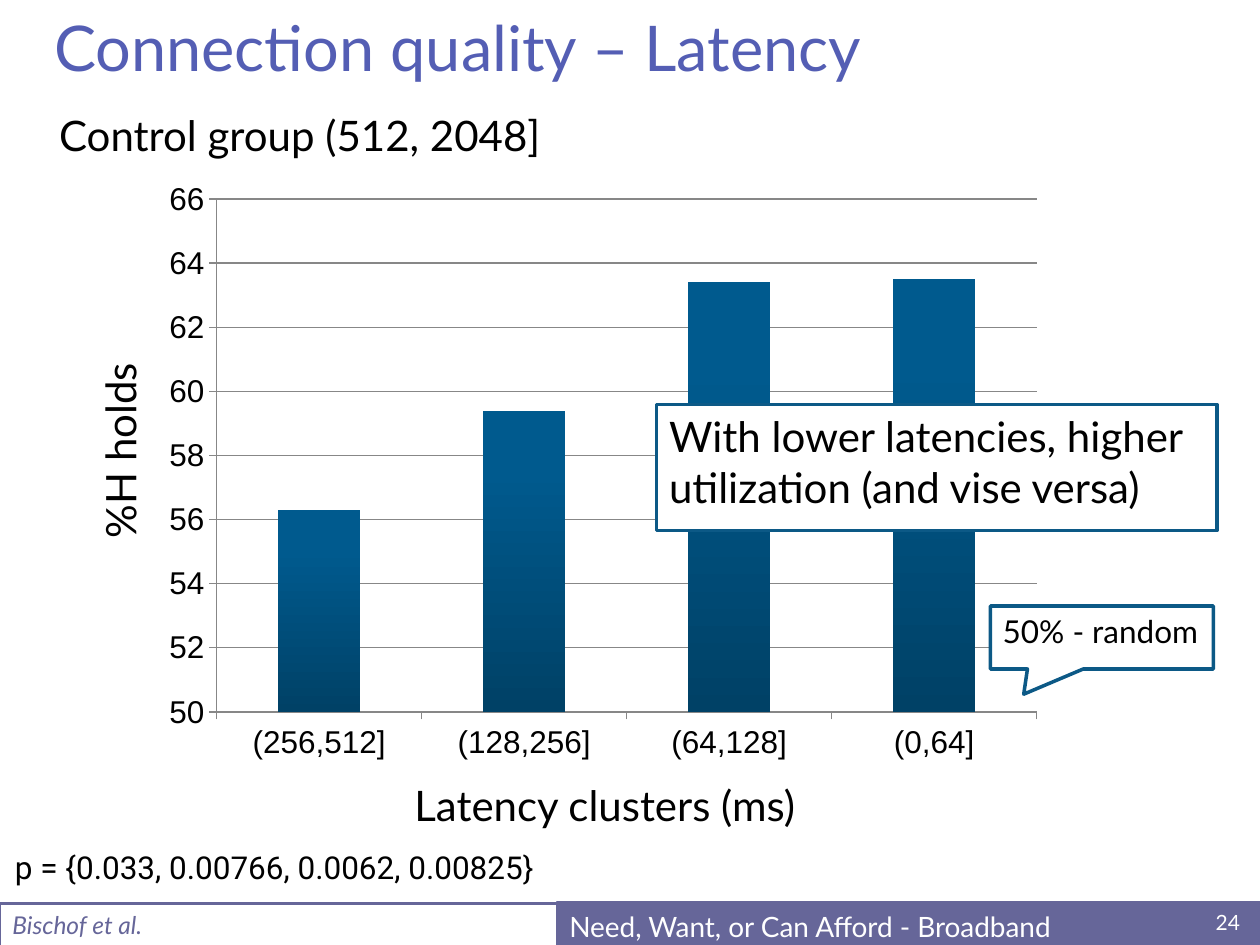
from dataclasses import dataclass

from lxml import etree
from pptx import Presentation
from pptx import util as u
from pptx.chart.data import CategoryChartData
from pptx.dml.color import RGBColor
from pptx.enum import chart as charts, shapes, text
from pptx.oxml import parse_xml
from pptx.oxml.ns import nsdecls, qn

COLS, ROWS = 100, 75
INK = {
    "title": "545EB4", "foot": "666699", "edge": "0C5986", "text": "000000",
    "paper": "FFFFFF", "grid": "878787", "top": "005A8E", "base": "004166",
}


@dataclass
class Box:
    """A place on the grid, in columns and rows."""
    col: float
    row: float
    wide: float
    high: float


@dataclass
class Label:
    words: str
    box: Box
    size: int = 24
    ink: str = "text"
    face: str = "Lato"
    slant: bool = False
    wrap: bool = False
    turn: int = 0


@dataclass
class Bar:
    box: Box
    fill: str | None


deck = Presentation()
deck.slide_width, deck.slide_height = u.Inches(10), u.Inches(7.5)
slide = deck.slides.add_slide(deck.slide_layouts[1])


def hue(name: str) -> RGBColor:
    return RGBColor.from_string(INK[name])


def span(box: Box) -> tuple:
    col, row = deck.slide_width / COLS, deck.slide_height / ROWS
    return (int(box.col * col), int(box.row * row),
            int(box.wide * col), int(box.high * row))


def place(shape, box: Box) -> None:
    shape.left, shape.top, shape.width, shape.height = span(box)


def style(font, size: int, ink: str, face: str = "Lato", slant: bool = False) -> None:
    form = {"size": u.Pt(size), "name": face, "italic": slant, "bold": False}
    for key, val in form.items():
        setattr(font, key, val)
    font.color.rgb = hue(ink)


def paint(shape, fill: str | None, line: str, width: float) -> None:
    if fill:
        shape.fill.solid()
        shape.fill.fore_color.rgb = hue(fill)
    else:
        shape.fill.background()
    shape.line.color.rgb = hue(line)
    shape.line.width = u.Pt(width)


def write(shape, item: Label, mid: bool = False) -> None:
    frame = shape.text_frame
    anchor = text.MSO_ANCHOR.MIDDLE if mid else text.MSO_ANCHOR.TOP
    form = {"word_wrap": item.wrap, "auto_size": text.MSO_AUTO_SIZE.NONE,
            "vertical_anchor": anchor}
    for key, val in form.items():
        setattr(frame, key, val)
    frame.text = item.words
    para = frame.paragraphs[0]
    para.alignment = text.PP_ALIGN.LEFT
    style(para.runs[0].font, item.size, item.ink, item.face, item.slant)


def add_label(item: Label) -> None:
    shape = slide.shapes.add_textbox(*span(item.box))
    write(shape, item)
    shape.rotation = item.turn


def add_bar(item: Bar) -> None:
    shape = slide.shapes.add_shape(shapes.MSO_SHAPE.RECTANGLE, *span(item.box))
    shape.shadow.inherit = False
    paint(shape, item.fill, "foot", 1.5)


def add_plot(box: Box) -> None:
    data = CategoryChartData()
    data.categories = ["(256,512]", "(128,256]", "(64,128]", "(0,64]"]
    data.add_series("Series 1", [56.3, 59.4, 63.4, 63.5])
    kind = charts.XL_CHART_TYPE.COLUMN_CLUSTERED
    chart = slide.shapes.add_chart(kind, *span(box), data).chart
    chart.has_legend = chart.has_title = False
    style(chart.font, 18, "text", "Arial")

    # Axes
    axis = chart.value_axis
    form = {"minimum_scale": 50, "maximum_scale": 66, "major_unit": 2,
            "has_major_gridlines": True}
    for key, val in form.items():
        setattr(axis, key, val)
    axis.major_gridlines.format.line.color.rgb = hue("grid")
    for side in (axis, chart.category_axis):
        side.major_tick_mark = charts.XL_TICK_MARK.OUTSIDE
        side.format.line.color.rgb = hue("grid")

    # Columns shade from top to base
    plot = chart.plots[0]
    plot.gap_width, plot.vary_by_categories = 150, False
    fill = plot.series[0].format.fill
    fill.gradient()
    fill.gradient_angle = 270
    for stop, name, pos in zip(fill.gradient_stops, ("top", "base"), (0.2, 1)):
        stop.color.rgb, stop.position = hue(name), pos

    # Inner plot area as shares of the chart
    area = chart._chartSpace.chart.plotArea
    for old in area.findall(qn("c:layout")):
        area.remove(old)
    form = {"layoutTarget": "inner", "xMode": "edge", "yMode": "edge",
            "x": 0.07, "y": 0.05, "w": 0.91, "h": 0.85}
    frame = parse_xml(f"<c:layout {nsdecls('c')}><c:manualLayout/></c:layout>")
    for key, val in form.items():
        etree.SubElement(frame[0], qn(f"c:{key}")).set("val", str(val))
    area.insert(0, frame)


def add_call(item: Label) -> None:
    kind = shapes.MSO_SHAPE.RECTANGULAR_CALLOUT
    shape = slide.shapes.add_shape(kind, *span(item.box))
    shape.shadow.inherit = False
    shape.adjustments[0], shape.adjustments[1] = -0.35, 0.9
    paint(shape, "paper", "edge", 2)
    write(shape, item)


def set_body(item: Label) -> None:
    body = slide.placeholders[1]
    place(body, item.box)
    paint(body, "paper", "edge", 2)
    write(body, item)
    props = body.text_frame.paragraphs[0]._p.get_or_add_pPr()
    props.set("marL", "0")
    props.set("indent", "0")
    etree.SubElement(props, qn("a:buNone"))
    body.text_frame.paragraphs[0].space_before = u.Pt(0)
    slide.shapes._spTree.append(body.element)  # in front of the chart


# Footer
for bar in (Bar(Box(44.2, 71.6, 55.8, 3.4), "foot"), Bar(Box(0, 71.7, 100, 3.4), None)):
    add_bar(bar)
for note in (
    Label("Bischof et al.", Box(0, 71.7, 44.2, 3.3), 14, "foot", slant=True),
    Label("24", Box(95.5, 71.7, 4.5, 3.3), 12, "paper"),
    Label("Need, Want, or Can Afford - Broadband", Box(44.2, 71.7, 52.5, 3.7), 16, "paper"),
):
    add_label(note)

# Title
head = Label("Connection quality – Latency", Box(3.3, 0.8, 93.3, 5.8), 36, "title", wrap=True)
place(slide.shapes.title, head.box)
write(slide.shapes.title, head, mid=True)

# Chart and remarks
add_plot(Box(12.2, 13.4, 71.5, 47.9))
add_call(Label("50% - random", Box(78.6, 48.1, 17.7, 5), 18, wrap=True))
set_body(Label("With lower latencies, higher utilization (and vise versa)",
               Box(52.1, 32.1, 44.5, 10), wrap=True))

# Captions
for note in (
    Label("Latency clusters (ms)", Box(31.9, 61.4, 32.8, 5)),
    Label("%H holds", Box(1.3, 33, 16.4, 5), turn=270),
    Label("Control group (512, 2048]", Box(3.7, 8.2, 40.9, 5)),
    Label("p = {0.033, 0.00766, 0.0062, 0.00825}", Box(0.2, 66.8, 45, 4), 18, face="Roboto"),
):
    add_label(note)

deck.save("out.pptx")
